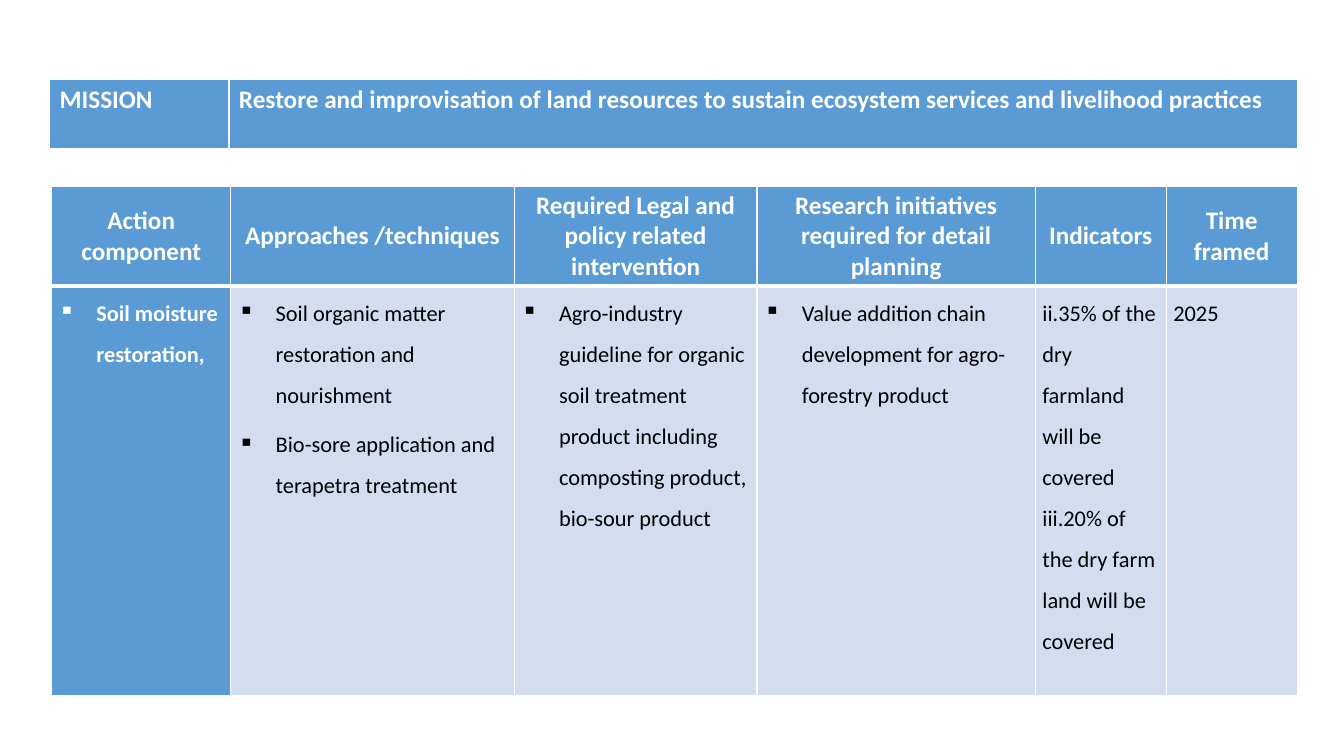
from lxml import etree
from pptx import Presentation
from pptx.dml.color import RGBColor
from pptx.enum import text
from pptx.oxml.ns import qn
from pptx.util import Cm, Pt

COLOURS = {"header": "5B9BD5", "body": "D2DEEF", "white": "FFFFFF", "black": "000000"}
FONT = "Calibri"

MISSION = ["MISSION", "Restore and improvisation of land resources to sustain "
           "ecosystem services and livelihood practices"]
HEADINGS = ["Action component", "Approaches /techniques",
            "Required Legal and policy related intervention",
            "Research initiatives required for detail planning",
            "Indicators", "Time framed"]
ACTIONS = [
    ["Soil moisture restoration,"],
    ["Soil organic matter restoration and nourishment",
     "Bio-sore application and terapetra treatment"],
    ["Agro-industry guideline for organic soil treatment product including "
     "composting product, bio-sour product"],
    ["Value addition chain development for agro-forestry product"],
    ["ii.35% of the dry farmland will be covered",
     "iii.20% of the dry farm land will be covered"],
    ["2025"],
]
BULLETED_COLUMNS = 4


def rgb(name):
    return RGBColor.from_string(COLOURS[name])


def add_bullet(paragraph):
    properties = paragraph._p.get_or_add_pPr()
    properties.set("marL", str(Cm(0.95)))
    properties.set("indent", str(-Cm(0.95)))
    etree.SubElement(properties, qn("a:buChar")).set("char", "▪")


def write_text(paragraph, wording, size=18, colour="white", bold=True,
               align=text.PP_ALIGN.LEFT, spacing=1.0, after=0, bullet=False):
    paragraph.alignment = align
    paragraph.line_spacing = spacing
    paragraph.space_after = Pt(after)
    if bullet:
        add_bullet(paragraph)
    run = paragraph.add_run()
    run.text = wording
    run.font.name = FONT
    run.font.size = Pt(size)
    run.font.bold = bold
    run.font.color.rgb = rgb(colour)


def style_cell(cell, fill, top=1, bottom=1):
    properties = cell._tc.get_or_add_tcPr()
    for side, width in zip("LRTB", (1, 1, top, bottom)):
        border = etree.SubElement(properties, qn(f"a:ln{side}"))
        border.set("w", str(Pt(width)))
        solid = etree.SubElement(border, qn("a:solidFill"))
        etree.SubElement(solid, qn("a:srgbClr")).set("val", COLOURS["white"])
    cell.fill.solid()
    cell.fill.fore_color.rgb = rgb(fill)


def tighten_margins(cell):
    cell.margin_left = cell.margin_right = Cm(0.18)
    cell.margin_top = cell.margin_bottom = 0


def add_grid(slide, left, top, widths, heights):
    frame = slide.shapes.add_table(len(heights), len(widths), Cm(left), Cm(top),
                                   Cm(sum(widths)), Cm(sum(heights)))
    grid = frame.table
    for column, width in zip(grid.columns, widths):
        column.width = Cm(width)
    for row, height in zip(grid.rows, heights):
        row.height = Cm(height)
    return grid


def add_mission(slide, left, top, widths, height):
    mission = add_grid(slide, left, top, widths, [height])
    for cell, wording in zip(mission.rows[0].cells, MISSION):
        style_cell(cell, "header", bottom=3)
        write_text(cell.text_frame.paragraphs[0], wording)


def add_action_plan(slide, left, top, widths, heights):
    plan = add_grid(slide, left, top, widths, heights)
    for index, (heading, entries) in enumerate(zip(HEADINGS, ACTIONS)):
        heading_cell, action_cell = plan.cell(0, index), plan.cell(1, index)
        is_component = index == 0

        style_cell(heading_cell, "header", bottom=3)
        tighten_margins(heading_cell)
        heading_cell.vertical_anchor = text.MSO_ANCHOR.MIDDLE
        write_text(heading_cell.text_frame.paragraphs[0], heading,
                   align=text.PP_ALIGN.CENTER)

        style_cell(action_cell, "header" if is_component else "body", top=3)
        tighten_margins(action_cell)
        bulleted = index < BULLETED_COLUMNS
        frame = action_cell.text_frame
        for number, entry in enumerate(entries):
            paragraph = frame.add_paragraph() if number else frame.paragraphs[0]
            write_text(paragraph, entry, size=16, bold=is_component,
                       colour="white" if is_component else "black",
                       spacing=1.5, after=6 if bulleted else 0, bullet=bulleted)


def main():
    deck = Presentation()
    deck.slide_width, deck.slide_height = Cm(33.87), Cm(19.05)
    slide = deck.slides.add_slide(deck.slide_layouts[6])
    add_mission(slide, 1.25, 2, [4.52, 26.92], 1.77)
    add_action_plan(slide, 1.3, 4.7, [4.52, 7.14, 6.12, 7.01, 3.3, 3.3], [2.51, 10.32])
    deck.save("out.pptx")


if __name__ == "__main__":
    main()
